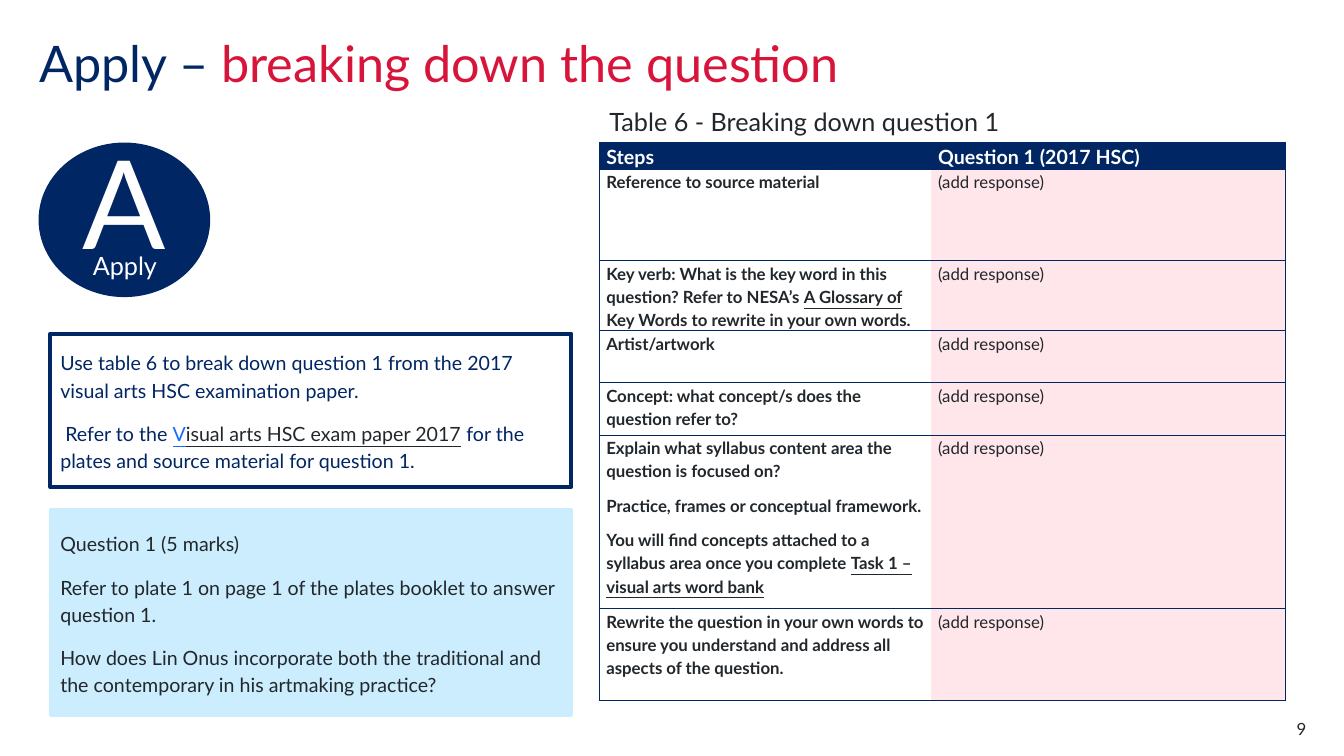
from dataclasses import dataclass
from typing import Optional

import pptx
import pptx.dml.color
import pptx.enum.shapes
import pptx.enum.text
import pptx.oxml
import pptx.oxml.ns
import pptx.util
from pptx.util import Cm

COLORS = {
    "navy": "002664", "red": "D7153A", "ink": "22272B", "link": "146CFD",
    "white": "FFFFFF", "sky": "CBEDFD", "pink": "FFE6EA",
}
FONT = "Lato"
SHAPES = pptx.enum.shapes.MSO_SHAPE
ANCHOR = pptx.enum.text.MSO_ANCHOR
ALIGN = pptx.enum.text.PP_ALIGN


@dataclass(frozen=True)
class Span:
    text: str
    color: Optional[str] = None
    underline: Optional[bool] = None


@dataclass(frozen=True)
class Style:
    size: float
    color: str
    bold: bool = False
    align: ALIGN = ALIGN.LEFT
    line: object = None
    before: float = 0
    after: float = 0


@dataclass(frozen=True)
class Block:
    """A shape with text; plain text boxes have no geometry."""
    at: tuple[float, float, float, float]
    paragraphs: list[list[Span]]
    style: Style
    geometry: Optional[SHAPES] = None
    fill: str = "white"
    outline: str = "navy"
    weight: float = 1
    insets: tuple[float, float, float, float] = (0, 0, 0, 0)


def rgb(name: str) -> pptx.dml.color.RGBColor:
    return pptx.dml.color.RGBColor.from_string(COLORS[name])


def write(tf, paragraphs: list[list[Span]], style: Style) -> None:
    for i, spans in enumerate(paragraphs):
        p = tf.paragraphs[0] if i == 0 else tf.add_paragraph()
        p.alignment = style.align
        p.line_spacing = style.line
        p.space_before = pptx.util.Pt(style.before if i else 0)
        p.space_after = pptx.util.Pt(style.after)
        p.font.name = FONT
        p.font.size = pptx.util.Pt(style.size)
        p.font.bold = style.bold
        p.font.color.rgb = rgb(style.color)
        for span in spans:
            r = p.add_run()
            r.text = span.text
            if span.color:
                r.font.color.rgb = rgb(span.color)
            if span.underline:
                r.font.underline = True


def add_block(s, block: Block) -> None:
    box = [Cm(v) for v in block.at]
    if block.geometry is None:
        sp = s.shapes.add_textbox(*box)
    else:
        sp = s.shapes.add_shape(block.geometry, *box)
        sp.shadow.inherit = False
        sp.fill.solid()
        sp.fill.fore_color.rgb = rgb(block.fill)
        sp.line.color.rgb = rgb(block.outline)
        sp.line.width = pptx.util.Pt(block.weight)
    tf = sp.text_frame
    tf.word_wrap = True
    tf.vertical_anchor = ANCHOR.TOP if block.geometry is None else ANCHOR.MIDDLE
    tf.margin_left, tf.margin_top, tf.margin_right, tf.margin_bottom = map(Cm, block.insets)
    write(tf, block.paragraphs, block.style)


def set_borders(cell, sides: str) -> None:
    """Rule the sides named in a string such as "LTB" and clear the others."""
    tc_pr = cell._tc.get_or_add_tcPr()
    for side in "LRTB":
        paint = (f'<a:solidFill><a:srgbClr val="{COLORS["navy"]}"/></a:solidFill>'
                 if side in sides else "<a:noFill/>")
        tc_pr.append(pptx.oxml.parse_xml(
            f'<a:ln{side} {pptx.oxml.ns.nsdecls("a")} w="{pptx.util.Pt(0.5)}">{paint}</a:ln{side}>'))


def add_steps_table(s, left: float, top: float, widths: list[float],
                    heights: list[float], rows: list[list[list[Span]]]) -> None:
    frame = s.shapes.add_table(len(rows) + 1, 2, Cm(left), Cm(top),
                               Cm(sum(widths)), Cm(sum(heights)))
    table = frame.table
    table.first_row = table.horz_banding = False
    for column, width in zip(table.columns, widths):
        column.width = Cm(width)
    for row, height in zip(table.rows, heights):
        row.height = Cm(height)
    header = [[[Span("Steps")]], [[Span("Question 1 (2017 HSC)")]]]
    grid = [header] + [[step, [[Span("(add response)")]]] for step in rows]
    for i, texts in enumerate(grid):
        for j, paragraphs in enumerate(texts):
            cell = table.cell(i, j)
            cell.margin_left = cell.margin_right = Cm(0.17)
            cell.margin_top = cell.margin_bottom = 0
            set_borders(cell, "LTB" if j == 0 else "RTB")
            cell.fill.solid()
            cell.fill.fore_color.rgb = rgb("navy" if i == 0 else ("white", "pink")[j])
            style = (Style(14, "white", bold=True, line=1.15) if i == 0 else
                     Style(12, "ink", bold=j == 0, line=1.15, before=4, after=4))
            write(cell.text_frame, paragraphs, style)


PANEL_INSETS = (0.25, 0.13, 0.25, 0.13)
BLOCKS = [
    Block((0.99, 0.99, 27.99, 2.79),
          [[Span("Apply – "), Span("breaking down the question", "red")]],
          Style(36, "navy", line=0.9)),
    Block((0.99, 3.61, 4.29, 3.86), [[Span("A")]],
          Style(88, "white", align=ALIGN.CENTER),
          SHAPES.OVAL, fill="navy", insets=(0.25, 0.13, 0.25, 1.14)),
    Block((2.34, 6.3, 3.94, 1.22), [[Span("Apply")]], Style(18, "white")),
    Block((1.27, 8.41, 13.13, 3.86),
          [[Span("Use table 6 to break down question 1 from the 2017 visual arts "
                 "HSC examination paper.")],
           [Span("\N{NO-BREAK SPACE}Refer to the "), Span("V", "link", True),
            Span("isual arts HSC exam paper 2017", "ink", True),
            Span(" for the plates and source material for question 1.")]],
          Style(14, "navy", line=1.15, before=12),
          SHAPES.RECTANGLE, weight=3, insets=PANEL_INSETS),
    Block((1.27, 12.83, 13.13, 5.21),
          [[Span("Question 1 (5 marks)")],
           [Span("Refer to plate 1 on page 1 of the plates booklet to answer question 1.")],
           [Span("How does Lin Onus incorporate both the traditional and the "
                 "contemporary in his artmaking practice?")]],
          Style(14, "ink", line=1.15, before=12),
          SHAPES.RECTANGLE, fill="sky", outline="sky", weight=2.25, insets=PANEL_INSETS),
    Block((15.11, 2.9, 17.28, 0.71), [[Span("Table 6 - Breaking down question 1")]],
          Style(18, "ink", line=pptx.util.Pt(12), after=6), insets=PANEL_INSETS),
    Block((30.91, 18.11, 2.01, 0.51), [[Span("9")]], Style(12, "ink", align=ALIGN.RIGHT)),
]

STEPS = [
    [[Span("Reference to source material")]],
    [[Span("Key verb: What is the key word in this question? Refer to NESA’s "),
      Span("A Glossary of Key Words", underline=True),
      Span(" to rewrite in your own words.")]],
    [[Span("Artist/artwork")]],
    [[Span("Concept: what concept/s does the question refer to?")]],
    [[Span("Explain what syllabus content area the question is focused on?")],
     [Span("Practice, frames or conceptual framework.")],
     [Span("You will find concepts attached to a syllabus area once you complete "),
      Span("Task 1 – visual arts word bank", underline=True)]],
    [[Span("Rewrite the question in your own words to ensure you understand and "
           "address all aspects of the question.")]],
]


def main() -> None:
    prs = pptx.Presentation()
    prs.slide_width, prs.slide_height = Cm(33.87), Cm(19.05)
    s = prs.slides.add_slide(prs.slide_layouts[6])
    for block in BLOCKS:
        add_block(s, block)
    add_steps_table(s, 15.11, 3.58, [8.36, 8.92],
                    [0.66, 2.31, 1.73, 1.32, 1.32, 4.37, 2.31], STEPS)
    prs.save("out.pptx")


if __name__ == "__main__":
    main()
